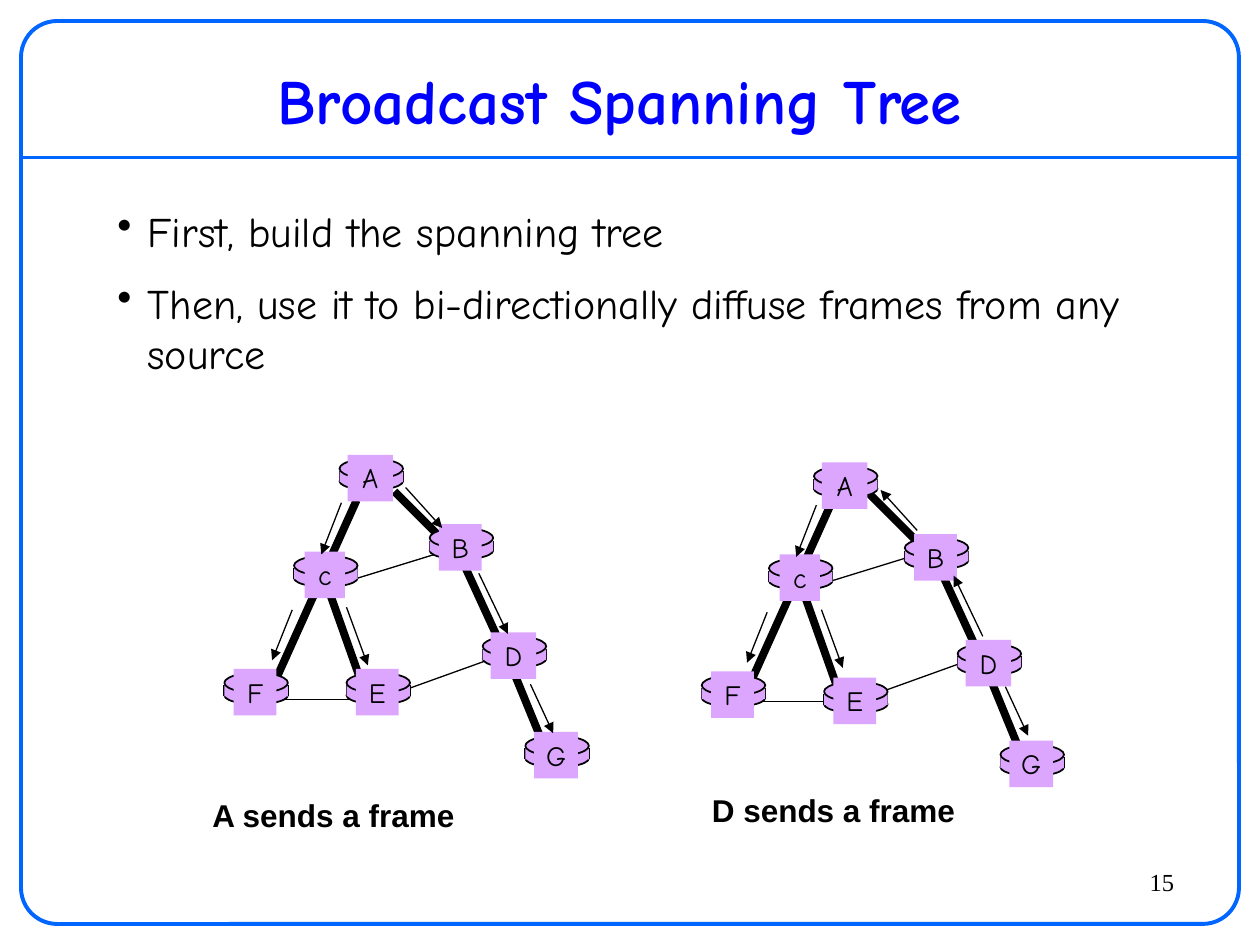
import pptx
import pptx.util
import pptx.dml.color
import pptx.enum.shapes
import pptx.enum.text
import pptx.oxml
import pptx.oxml.ns

Pt = pptx.util.Pt
SHAPE = pptx.enum.shapes.MSO_SHAPE
ALIGN = pptx.enum.text.PP_ALIGN
ANCHOR = pptx.enum.text.MSO_ANCHOR

BLACK, FRAME, TITLE, LILAC = "000000", "0066FF", "0000FF", "DCA6FF"
HAND = "Comic Neue"
SHIFT = (271.4, 1.4)

TREE_LINKS = [
    (262.8, 317.5, 287.3, 370.8),
    (288.7, 372.2, 313.2, 432),
    (207.4, 392.4, 187.2, 335.5),
    (225.4, 280.8, 257.8, 313.2),
    (203.8, 285.8, 154.8, 394.6),
]
OTHER_LINKS = [
    (276.5, 378, 232.6, 393.8),
    (208.8, 399.6, 155.5, 399.6),
    (199.4, 331.9, 248.4, 316.8),
]
ARROWS = {
    "AC": (195.1, 287.3, 183.6, 316.8),
    "CF": (167, 348.5, 155.5, 377.3),
    "AB": (231.8, 278.6, 252.7, 301.7),
    "BD": (273.6, 327.6, 290.2, 362.2),
    "DG": (303.1, 391, 316.1, 419),
    "CE": (198, 347, 210.2, 380.2),
}
LABEL_WIDTHS = {"A": 26, "B": 24.5, "G": 25, "D": 26, "E": 24.5, "c": 23, "F": 24.5}
NODES_FROM_A = {
    "A": (194, 262.1), "B": (245.5, 301.7), "G": (300.2, 420.5), "D": (275.8, 363.6),
    "E": (198, 384.5), "c": (168, 317.5), "F": (128.2, 384.5),
}
NODES_FROM_D = {
    "A": (465.1, 266.4), "B": (517, 307.4), "G": (571.7, 425.5), "D": (547.2, 367.9),
    "E": (470.9, 389.5), "c": (439.4, 319), "F": (401, 385.9),
}


def color(value):
    return pptx.dml.color.RGBColor.from_string(value)


def add_line(shapes, x1, y1, x2, y2, width, line=BLACK, arrow=None):
    c = shapes.add_connector(pptx.enum.shapes.MSO_CONNECTOR.STRAIGHT, Pt(x1), Pt(y1), Pt(x2), Pt(y2))
    c.line.color.rgb = color(line)
    c.line.width = Pt(width)
    if arrow:
        end = pptx.oxml.parse_xml(f'<a:{arrow} {pptx.oxml.ns.nsdecls("a")} type="triangle"/>')
        c.line._get_or_add_ln().append(end)
    c._element.spPr.append(pptx.oxml.parse_xml(f'<a:effectLst {pptx.oxml.ns.nsdecls("a")}/>'))


def add_shape(shapes, kind, x, y, w, h, fill=None, line=None, width=1):
    sp = shapes.add_shape(kind, Pt(x), Pt(y), Pt(w), Pt(h))
    sp.shadow.inherit = False
    if fill:
        sp.fill.solid()
        sp.fill.fore_color.rgb = color(fill)
    else:
        sp.fill.background()
    if line:
        sp.line.color.rgb = color(line)
        sp.line.width = Pt(width)
    else:
        sp.line.fill.background()
    return sp


def set_text(sp, lines, size, font, ink=BLACK, bold=False, align=ALIGN.CENTER,
             anchor=ANCHOR.TOP, wrap=True):
    tf = sp.text_frame
    tf.word_wrap = wrap
    tf.vertical_anchor = anchor
    tf.text = "\n".join(lines)
    for p in tf.paragraphs:
        p.alignment = align
        for r in p.runs:
            r.font.size = Pt(size)
            r.font.name = font
            r.font.bold = bold
            r.font.color.rgb = color(ink)


def add_text(shapes, x, y, w, h, lines, size, font, **style):
    sp = shapes.add_textbox(Pt(x), Pt(y), Pt(w), Pt(h))
    set_text(sp, lines, size, font, **style)
    return sp


def add_bullets(shapes, x, y, w, h, lines, size):
    sp = add_text(shapes, x, y, w, h, lines, size, HAND, align=ALIGN.LEFT)
    for p in sp.text_frame.paragraphs:
        p.space_before = Pt(size / 2)
        pPr = p._p.get_or_add_pPr()
        pPr.set("marL", str(Pt(17.28)))
        pPr.set("indent", str(-Pt(17.28)))
        pPr.append(pptx.oxml.parse_xml(f'<a:buChar {pptx.oxml.ns.nsdecls("a")} char="•"/>'))


def add_router(shapes, name, x, y):
    w = 36.3
    parts = shapes.add_group_shape().shapes
    add_shape(parts, SHAPE.OVAL, x, y + 7.9, w, 10, LILAC, BLACK)
    for side in (x, x + w):
        add_line(parts, side, y + 7.2, side, y + 13.4, 1)
    add_shape(parts, SHAPE.RECTANGLE, x, y + 7.2, w, 6.3, LILAC)
    add_shape(parts, SHAPE.OVAL, x, y, w, 11.4, LILAC, BLACK)
    label_w = LABEL_WIDTHS[name]
    label = add_shape(parts, SHAPE.RECTANGLE, x + 17.6 - label_w / 2, y - 2.2, label_w, 26.6, LILAC)
    set_text(label, [name], 16, HAND, wrap=False)


def add_network(shapes, dx, dy, nodes, upward=()):
    def moved(ends):
        x1, y1, x2, y2 = ends
        return x1 + dx, y1 + dy, x2 + dx, y2 + dy

    for links, width in ((TREE_LINKS, 4.5), (OTHER_LINKS, 0.75)):
        for ends in links:
            add_line(shapes, *moved(ends), width)
    for name, (x, y) in nodes.items():
        add_router(shapes, name, x, y)
    for hop, ends in ARROWS.items():
        add_line(shapes, *moved(ends), 0.75, arrow="headEnd" if hop in upward else "tailEnd")


def main():
    prs = pptx.Presentation()
    prs.slide_width, prs.slide_height = Pt(720), Pt(540)
    s = prs.slides.add_slide(prs.slide_layouts[6])
    shapes = s.shapes

    add_line(shapes, 12, 90, 708, 90, 2.25, FRAME)
    frame = add_shape(shapes, SHAPE.ROUNDED_RECTANGLE, 12, 12, 696, 516, line=FRAME, width=2.25)
    frame.adjustments[0] = 0.04
    add_text(shapes, 606, 492, 72, 30, ["15"], 14, "Times New Roman", align=ALIGN.RIGHT)
    add_text(shapes, 24, 30, 660, 54, ["Broadcast Spanning Tree"], 36, HAND,
             ink=TITLE, bold=True, anchor=ANCHOR.MIDDLE)

    add_network(shapes, 0, 0, NODES_FROM_A)
    add_network(shapes, *SHIFT, NODES_FROM_D, upward=("AB", "BD"))

    for source, x, y in (("A", 113.8, 451.4), ("D", 399.6, 448.4)):
        add_text(shapes, x, y, 153.4, 29, [f"{source} sends a frame"], 18, "Arial", bold=True, wrap=False)
    add_bullets(shapes, 60, 114, 620, 114, [
        "First, build the spanning tree",
        "Then, use it to bi-directionally diffuse frames from any source",
    ], 24)
    prs.save("out.pptx")


if __name__ == "__main__":
    main()
